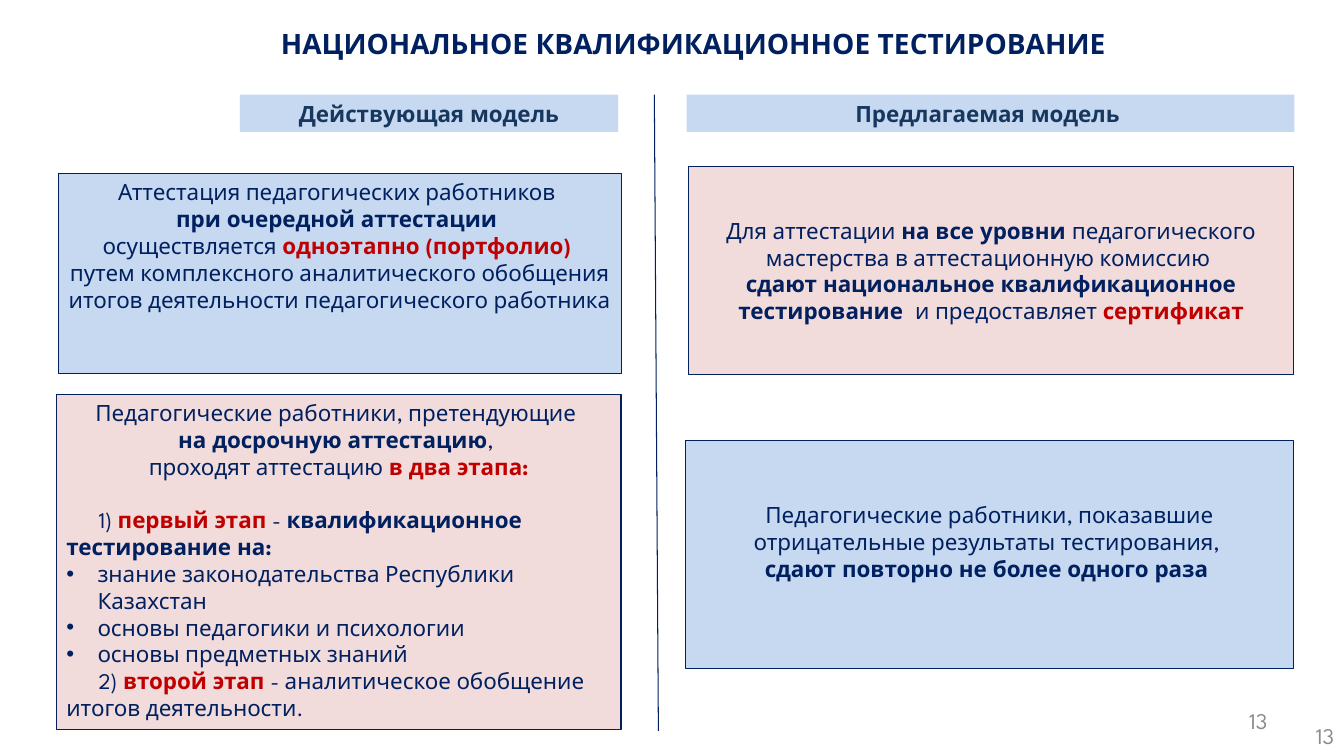
"""Builds a slide comparing the current and proposed teacher attestation models."""
from dataclasses import dataclass

from lxml import etree
from pptx import Presentation
from pptx.dml.color import RGBColor
from pptx.enum.shapes import MSO_CONNECTOR, MSO_SHAPE
from pptx.enum.text import MSO_ANCHOR, PP_ALIGN
from pptx.oxml.ns import qn
from pptx.util import Inches, Pt

RECTANGLE = MSO_SHAPE.RECTANGLE
STRAIGHT = MSO_CONNECTOR.STRAIGHT
TOP, MIDDLE = MSO_ANCHOR.TOP, MSO_ANCHOR.MIDDLE
LEFT, CENTER, RIGHT = PP_ALIGN.LEFT, PP_ALIGN.CENTER, PP_ALIGN.RIGHT


@dataclass(frozen=True)
class Theme:
    font: str = "League Spartan"
    navy: RGBColor = RGBColor(0x00, 0x20, 0x60)
    heading: RGBColor = RGBColor(0x17, 0x37, 0x5E)
    red: RGBColor = RGBColor(0xC0, 0x00, 0x00)
    gray: RGBColor = RGBColor(0x8C, 0x8C, 0x8C)
    blue_fill: RGBColor = RGBColor(0xC6, 0xD9, 0xF1)
    pink_fill: RGBColor = RGBColor(0xF2, 0xDC, 0xDB)
    title_size: Pt = Pt(20)
    body_size: Pt = Pt(16)
    line_width: Pt = Pt(0.75)


theme = Theme()
PLAIN = (theme.navy, False)
BOLD = (theme.navy, True)
ACCENT = (theme.red, True)
HEADING = (theme.heading, True)
NUMBER = (theme.gray, False)


def write_text(box, paragraphs, anchor, size=theme.body_size):
    """Fills a box with (layout, spans) paragraphs."""
    frame = box.text_frame
    frame.word_wrap = True
    frame.vertical_anchor = anchor
    for index, (layout, spans) in enumerate(paragraphs):
        para = frame.paragraphs[0] if index == 0 else frame.add_paragraph()
        para.alignment = layout if layout in (CENTER, RIGHT) else LEFT
        properties = para._p.get_or_add_pPr()
        if layout == "stage":
            properties.set("indent", str(Inches(0.32)))
        elif layout == "bullet":
            properties.set("marL", str(Inches(0.31)))
            properties.set("indent", str(-Inches(0.31)))
            bullet_font = etree.SubElement(properties, qn("a:buFont"))
            bullet_font.set("typeface", "Arial")
            etree.SubElement(properties, qn("a:buChar")).set("char", "•")
        for text, (color, bold) in spans:
            span = para.add_run()
            span.text = text
            span.font.name = theme.font
            span.font.size = size
            span.font.bold = bold
            span.font.color.rgb = color


def add_panel(page, place, fill, outlined, paragraphs, anchor):
    """Adds a filled rectangle with text."""
    box = page.shapes.add_shape(RECTANGLE, *map(Inches, place))
    box.shadow.inherit = False
    box.fill.solid()
    box.fill.fore_color.rgb = fill
    if outlined:
        box.line.color.rgb = theme.navy
        box.line.width = theme.line_width
    else:
        box.line.fill.background()
    write_text(box, paragraphs, anchor)
    return box


deck = Presentation()
deck.slide_width, deck.slide_height = Inches(13.33), Inches(7.5)
page = deck.slides.add_slide(deck.slide_layouts[6])

title = page.shapes.add_textbox(Inches(1.99), Inches(0.12), Inches(9.77), Inches(0.61))
write_text(title, [(CENTER, [("НАЦИОНАЛЬНОЕ КВАЛИФИКАЦИОННОЕ ТЕСТИРОВАНИЕ", BOLD)])],
           MIDDLE, theme.title_size)

for left, width, caption in [(2.38, 3.75, "Действующая модель"),
                             (6.81, 6.03, "Предлагаемая модель ")]:
    add_panel(page, (left, 0.94, width, 0.37), theme.blue_fill, False,
              [(CENTER, [(caption, HEADING)])], TOP)

divider = page.shapes.add_connector(STRAIGHT, Inches(6.49), Inches(0.94),
                                    Inches(6.53), Inches(7.25))
divider.line.color.rgb = theme.navy
divider.line.width = theme.line_width
etree.SubElement(divider._element.spPr, qn("a:effectLst"))

add_panel(page, (0.58, 1.72, 5.58, 1.99), theme.blue_fill, True, [
    (CENTER, [("Аттестация педагогических работников ", PLAIN)]),
    (CENTER, [("при очередной аттестации ", BOLD)]),
    (CENTER, [("осуществляется ", PLAIN), ("одноэтапно (портфолио) ", ACCENT)]),
    (CENTER, [("путем комплексного аналитического обобщения итогов деятельности "
               "педагогического работника", PLAIN)]),
], TOP)

early_box = add_panel(page, (0.56, 3.91, 5.6, 3.33), theme.pink_fill, True, [
    (CENTER, [("Педагогические работники, претендующие ", PLAIN)]),
    (CENTER, [("на досрочную аттестацию", BOLD), (", ", PLAIN)]),
    (CENTER, [("проходят аттестацию ", PLAIN), ("в два этапа:", ACCENT)]),
    ("stage", [("1) ", PLAIN), ("первый этап ", ACCENT), ("- ", PLAIN),
               ("квалификационное тестирование на:", BOLD)]),
    ("bullet", [("знание законодательства Республики Казахстан", PLAIN)]),
    ("bullet", [("основы педагогики и психологии", PLAIN)]),
    ("bullet", [("основы предметных знаний", PLAIN)]),
    ("stage", [("2) ", PLAIN), ("второй этап ", ACCENT),
               ("- аналитическое обобщение итогов деятельности.", PLAIN)]),
], TOP)
early_box.text_frame.paragraphs[3].space_before = Pt(19)

add_panel(page, (6.83, 1.65, 6, 2.07), theme.pink_fill, True, [
    (CENTER, [("Для аттестации ", PLAIN), ("на все уровни ", BOLD),
              ("педагогического мастерства в аттестационную комиссию ", PLAIN)]),
    (CENTER, [("сдают национальное квалификационное тестирование  ", BOLD),
              ("и предоставляет ", PLAIN), ("сертификат", ACCENT)]),
], MIDDLE)

retake_box = add_panel(page, (6.8, 4.37, 6.03, 2.26), theme.blue_fill, True, [
    (CENTER, [("Педагогические работники, показавшие отрицательные результаты "
               "тестирования, ", PLAIN)]),
    (CENTER, [("сдают повторно не более одного раза ", BOLD)]),
], MIDDLE)
retake_box.text_frame.margin_bottom = Inches(0.3)

for left, top in [(9.56, 6.95), (10.22, 7.1)]:
    number = page.shapes.add_textbox(Inches(left), Inches(top), Inches(3.11), Inches(0.4))
    write_text(number, [(RIGHT, [("13", NUMBER)])], MIDDLE)

deck.save("out.pptx")
